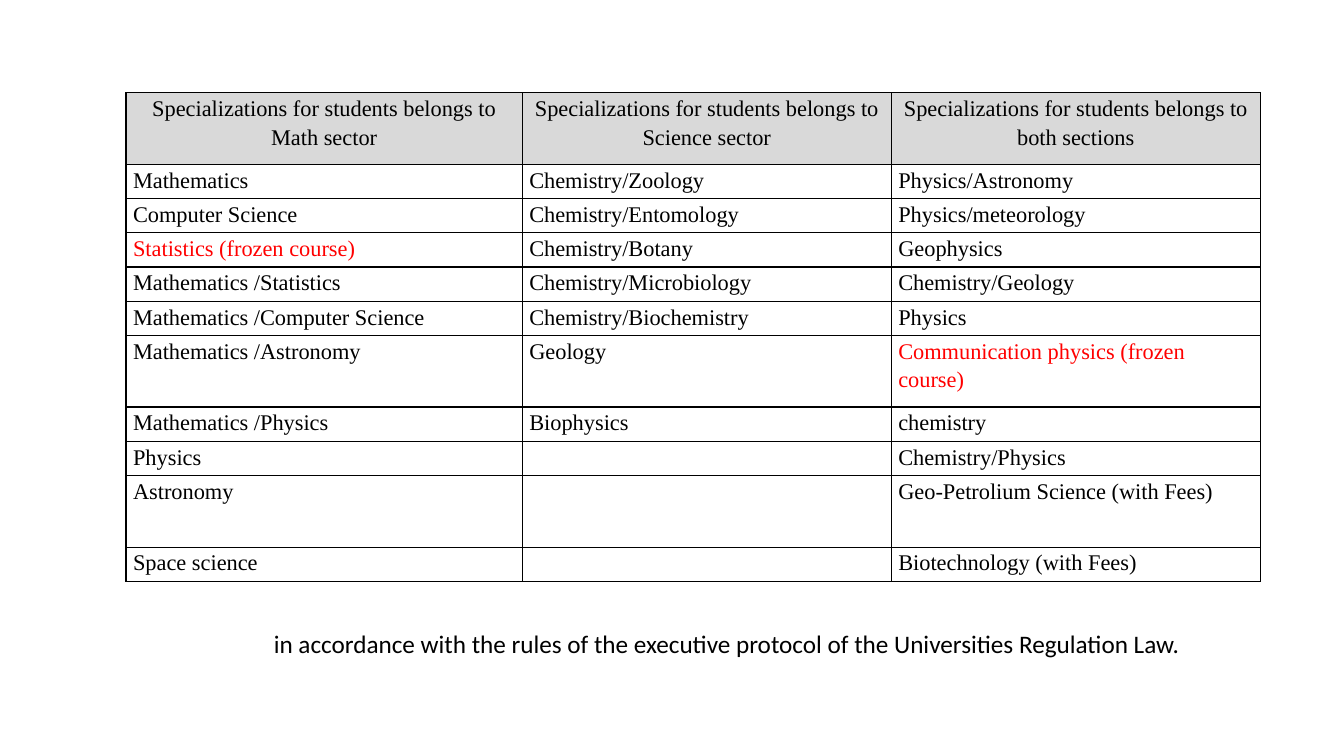
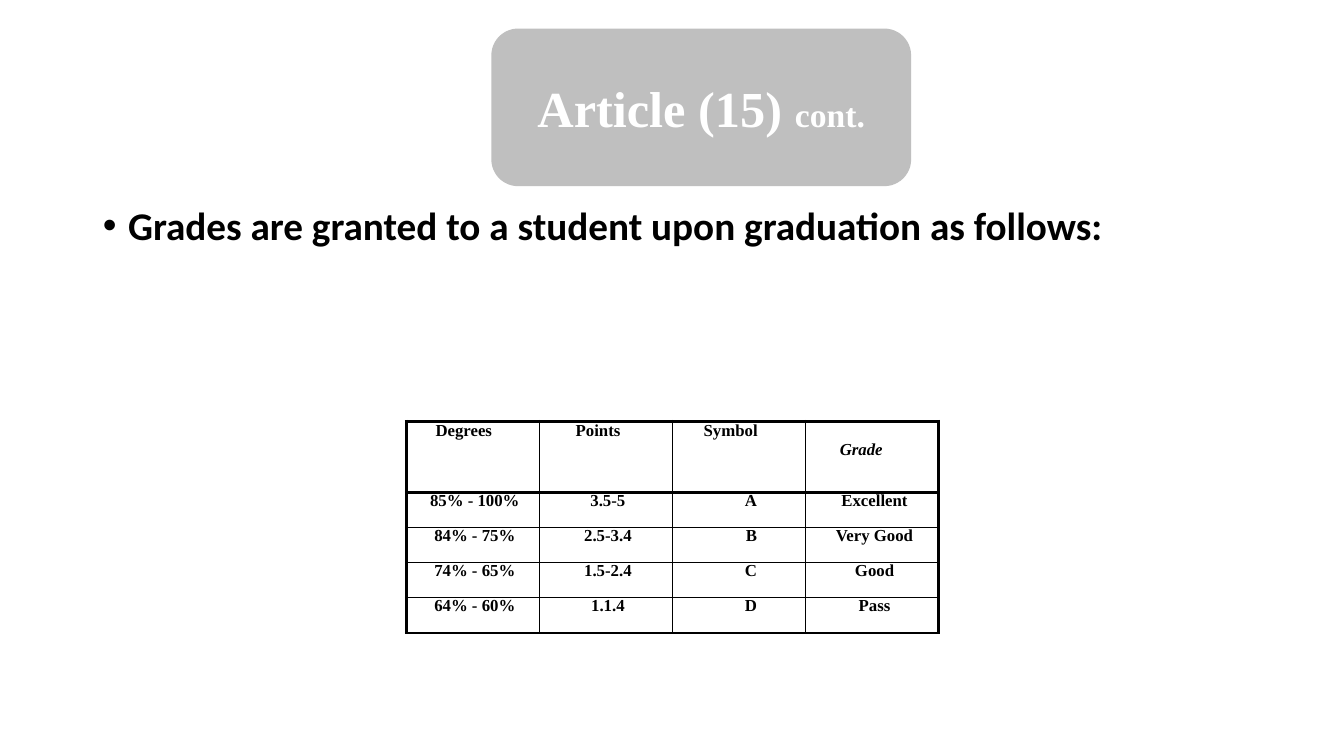
from lxml.etree import SubElement
from pptx import Presentation
from pptx.dml.color import RGBColor
from pptx.enum.shapes import MSO_SHAPE as Shape
from pptx.enum.text import MSO_ANCHOR as Anchor, MSO_AUTO_SIZE as AutoSize, PP_ALIGN as Align
from pptx.oxml.ns import qn
from pptx.util import Inches, Pt

BLACK, WHITE, RED = "000000", "FFFFFF", "FF0000"
HEADER_GRAY, BADGE_GRAY = "D9D9D9", "BFBFBF"
SERIF, SANS = "Times New Roman", "Calibri"
THIN, THICK = 1, 2.25

SPECIALIZATIONS = [
    ("Specializations for students belongs to Math sector",
     "Specializations for students belongs to Science sector",
     "Specializations for students belongs to both sections"),
    ("Mathematics", "Chemistry/Zoology", "Physics/Astronomy"),
    ("Computer Science", "Chemistry/Entomology", "Physics/meteorology"),
    ("Statistics (frozen course)", "Chemistry/Botany", "Geophysics"),
    ("Mathematics /Statistics", "Chemistry/Microbiology", "Chemistry/Geology"),
    ("Mathematics /Computer Science", "Chemistry/Biochemistry", "Physics"),
    ("Mathematics /Astronomy", "Geology", "Communication physics (frozen course)"),
    ("Mathematics /Physics", "Biophysics", "chemistry"),
    ("Physics", "", "Chemistry/Physics"),
    ("Astronomy", "", "Geo-Petrolium Science (with Fees)"),
    ("Space science", "", "Biotechnology (with Fees)"),
]
SPECIALIZATION_WIDTHS = [3.93, 3.66, 3.66]
TALL_ROWS = (0, 6, 9)
LAW_NOTE = ("in accordance with the rules of the executive protocol "
            "of the Universities Regulation Law.")

ARTICLE = [("Article (15) ", 36), ("cont.", 24)]
GRADES_INTRO = "Grades are granted to a student upon graduation as follows:"
GRADE_HEADINGS = [("Degrees", 0.29), ("Points", 0.36), ("Symbol", 0.31), ("Grade", 0.34)]
GRADES = [
    ("85% - 100%", "3.5-5", "A", "Excellent"),
    ("84% - 75%", "2.5-3.4", "B", "Very Good"),
    ("74% - 65%", "1.5-2.4", "C", "Good"),
    ("64% - 60%", "1.1.4", "D", "Pass"),
]
GRADE_COLUMNS = [(Align.CENTER, 0.12, 0.08), (Align.CENTER, 0.33, 0.29),
                 (Align.RIGHT, 0, 0.48), (Align.CENTER, 0.17, 0.12)]
GRADE_WIDTHS = [1.32] * 4


def rgb(color):
    return RGBColor.from_string(color)


def box(left, top, width, height):
    return [Inches(length) for length in (left, top, width, height)]


def add_run(paragraph, text, size, font=SERIF, color=BLACK, bold=False, italic=False):
    run = paragraph.add_run()
    run.text = text
    run.font.size, run.font.name = Pt(size), font
    run.font.bold, run.font.italic = bold, italic
    run.font.color.rgb = rgb(color)


def set_borders(cell, widths):
    properties = cell._tc.get_or_add_tcPr()
    for side, width in zip("LRTB", widths):
        edge = SubElement(properties, qn(f"a:ln{side}"), w=str(Pt(width)))
        fill = SubElement(edge, qn("a:solidFill"))
        SubElement(fill, qn("a:srgbClr"), val=BLACK)


def add_grid(slide, left, top, widths, heights, outer=THIN):
    last_row, last_column = len(heights) - 1, len(widths) - 1
    table = slide.shapes.add_table(len(heights), len(widths),
                                   *box(left, top, sum(widths), sum(heights))).table
    table.first_row = table.horz_banding = False
    for column, width in zip(table.columns, widths):
        column.width = Inches(width)
    for r, height in enumerate(heights):
        table.rows[r].height = Inches(height)
        for c in range(len(widths)):
            cell = table.cell(r, c)
            on_edge = (c == 0, c == last_column, r == 0, r == last_row)
            set_borders(cell, [outer if edge else THIN for edge in on_edge])
            cell.fill.background()
            set_margins(cell, 0, 0)
    return table


def set_margins(cell, left, right, top=0):
    cell.margin_left, cell.margin_right = Inches(left), Inches(right)
    cell.margin_top, cell.margin_bottom = Inches(top), 0


def write_cell(cell, text, size, align, spacing, **style):
    paragraph = cell.text_frame.paragraphs[0]
    paragraph.alignment, paragraph.line_spacing = align, spacing
    if text:
        add_run(paragraph, text, size, **style)


def build_specializations(deck):
    slide = deck.slides.add_slide(deck.slide_layouts[6])
    heights = [0.71 if r in TALL_ROWS else 0.34 for r in range(len(SPECIALIZATIONS))]
    table = add_grid(slide, 1.25, 0.92, SPECIALIZATION_WIDTHS, heights)
    for r, names in enumerate(SPECIALIZATIONS):
        for c, name in enumerate(names):
            cell = table.cell(r, c)
            set_margins(cell, 0.07, 0.07)
            write_cell(cell, name, 16, Align.LEFT if r else Align.CENTER, 1.15,
                       color=RED if "frozen" in name else BLACK)
            if r == 0:
                cell.fill.solid()
                cell.fill.fore_color.rgb = rgb(HEADER_GRAY)

    note = slide.shapes.add_textbox(*box(1.92, 6.18, 10.58, 0.4)).text_frame
    note.word_wrap, note.auto_size = True, AutoSize.SHAPE_TO_FIT_TEXT
    note.paragraphs[0].alignment = Align.CENTER
    add_run(note.paragraphs[0], LAW_NOTE, 18, SANS)


def add_intro(slide):
    body = slide.placeholders[1]
    body.left, body.top, body.width, body.height = box(0.92, 2, 11.5, 4.76)
    body.text_frame.auto_size = AutoSize.NONE
    intro = body.text_frame.paragraphs[0]
    intro.line_spacing, intro.space_before = 0.9, Pt(10)
    properties = intro._p.get_or_add_pPr()
    properties.set("marL", str(Inches(0.25)))
    properties.set("indent", str(Inches(-0.25)))
    SubElement(properties, qn("a:buFont"), typeface="Arial")
    SubElement(properties, qn("a:buChar"), char="•")
    add_run(intro, GRADES_INTRO, 28, SANS, bold=True)


def add_badge(slide):
    badge = slide.shapes.add_shape(Shape.ROUNDED_RECTANGLE, *box(4.88, 0.29, 4.15, 1.55))
    badge.shadow.inherit = False
    badge.fill.solid()
    badge.fill.fore_color.rgb = badge.line.color.rgb = rgb(BADGE_GRAY)
    badge.line.width = Pt(1)
    badge.text_frame.word_wrap = True
    badge.text_frame.vertical_anchor = Anchor.MIDDLE
    heading = badge.text_frame.paragraphs[0]
    heading.alignment = Align.CENTER
    for text, size in ARTICLE:
        add_run(heading, text, size, color=WHITE, bold=True)


def build_grades(deck):
    slide = deck.slides.add_slide(deck.slide_layouts[1])
    title = slide.shapes.title._element
    title.getparent().remove(title)
    add_intro(slide)
    add_badge(slide)

    headings = add_grid(slide, 4.03, 4.18, GRADE_WIDTHS, [0.71], THICK)
    for c, (heading, indent) in enumerate(GRADE_HEADINGS):
        cell, is_grade = headings.cell(0, c), heading == "Grade"
        set_margins(cell, indent, 0, 0.19 if is_grade else 0)
        write_cell(cell, heading, 12, Align.LEFT, Pt(13.7), bold=True, italic=is_grade)

    scale = add_grid(slide, 4.03, 4.88, GRADE_WIDTHS, [0.35] * len(GRADES), THICK)
    for r, grade in enumerate(GRADES):
        for c, (text, (align, left, right)) in enumerate(zip(grade, GRADE_COLUMNS)):
            set_margins(scale.cell(r, c), left, right)
            write_cell(scale.cell(r, c), text, 12, align, Pt(12.8), bold=True)


def main():
    deck = Presentation()
    deck.slide_width, deck.slide_height = Inches(13.33), Inches(7.5)
    build_specializations(deck)
    build_grades(deck)
    deck.save("out.pptx")


if __name__ == "__main__":
    main()
